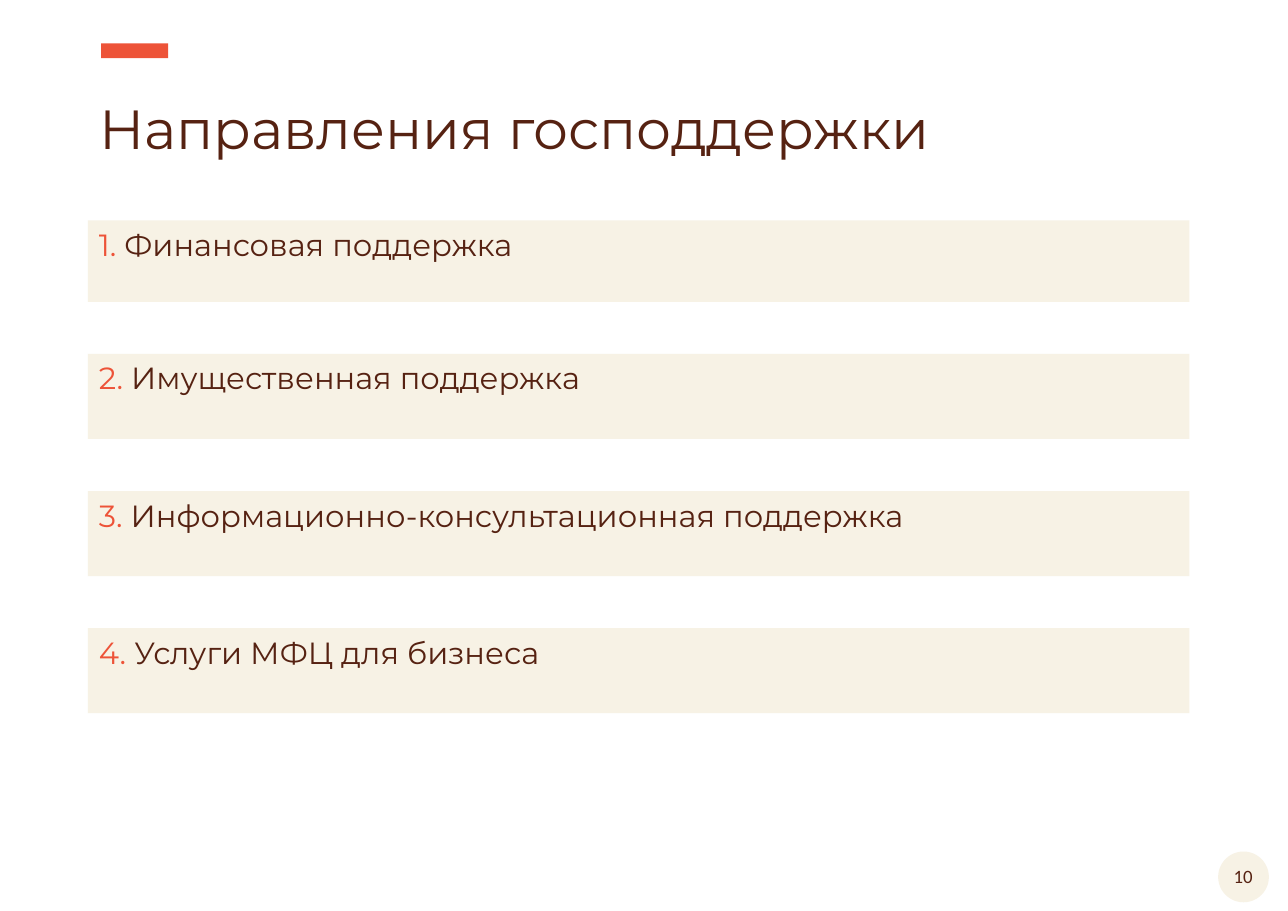
from pptx import Presentation
from pptx.dml.color import RGBColor
from pptx.enum.shapes import MSO_SHAPE
from pptx.enum.text import MSO_ANCHOR, MSO_AUTO_SIZE, PP_ALIGN
from pptx.util import Cm, Pt

TITLE = "Направления господдержки"
BARS = [
    ("1. ", "Финансовая поддержка", 1.88),
    ("2. ", "Имущественная поддержка", 1.96),
    ("3. ", "Информационно-консультационная поддержка", 1.96),
    ("4. ", "Услуги МФЦ для бизнеса", 1.96),
]
PAGE = "10"
BROWN, RED, CREAM = "562212", "ED5338", "F7F2E5"
LEFT, WIDTH, TOP, GAP = 2.03, 25.4, 5.08, 1.2


def tint(text):
    return RGBColor.from_string(text)


def add_form(slide, kind, box, fill):
    form = slide.shapes.add_shape(kind, *map(Cm, box))
    form.shadow.inherit = False
    form.fill.solid()
    form.fill.fore_color.rgb = tint(fill)
    form.line.fill.background()
    return form


def add_run(para, text, size, color, face="Montserrat"):
    run = para.add_run()
    run.text = text
    run.font.size = Pt(size)
    run.font.name = face
    run.font.color.rgb = tint(color)


def set_frame(shape, align, anchor):
    frame = shape.text_frame
    frame.word_wrap = True
    frame.auto_size = MSO_AUTO_SIZE.NONE
    frame.vertical_anchor = anchor
    para = frame.paragraphs[0]
    para.alignment = align
    return para


def main():
    deck = Presentation()
    deck.slide_width, deck.slide_height = Cm(29.7), Cm(21)
    slide = deck.slides.add_slide(deck.slide_layouts[5])

    title = slide.shapes.title
    title.left, title.top = Cm(LEFT), Cm(2.28)
    title.width, title.height = Cm(23.37), Cm(1.58)
    para = set_frame(title, PP_ALIGN.LEFT, MSO_ANCHOR.TOP)
    para.line_spacing = 0.85
    add_run(para, TITLE, 36, BROWN)

    add_form(slide, MSO_SHAPE.RECTANGLE, (2.33, 1, 1.55, 0.34), RED)

    top = TOP
    for number, label, height in BARS:
        box = LEFT, top, WIDTH, height
        bar = add_form(slide, MSO_SHAPE.RECTANGLE, box, CREAM)
        para = set_frame(bar, PP_ALIGN.LEFT, MSO_ANCHOR.TOP)
        add_run(para, number, 20, RED)
        add_run(para, label, 20, BROWN)
        top += height + GAP

    add_form(slide, MSO_SHAPE.OVAL, (28.09, 19.63, 1.17, 1.17), CREAM)
    page = slide.shapes.add_textbox(Cm(28.02), Cm(19.81), Cm(1.3), Cm(0.79))
    para = set_frame(page, PP_ALIGN.CENTER, MSO_ANCHOR.TOP)
    add_run(para, PAGE, 12.3, BROWN, "Calibri")

    deck.save("out.pptx")


if __name__ == "__main__":
    main()
